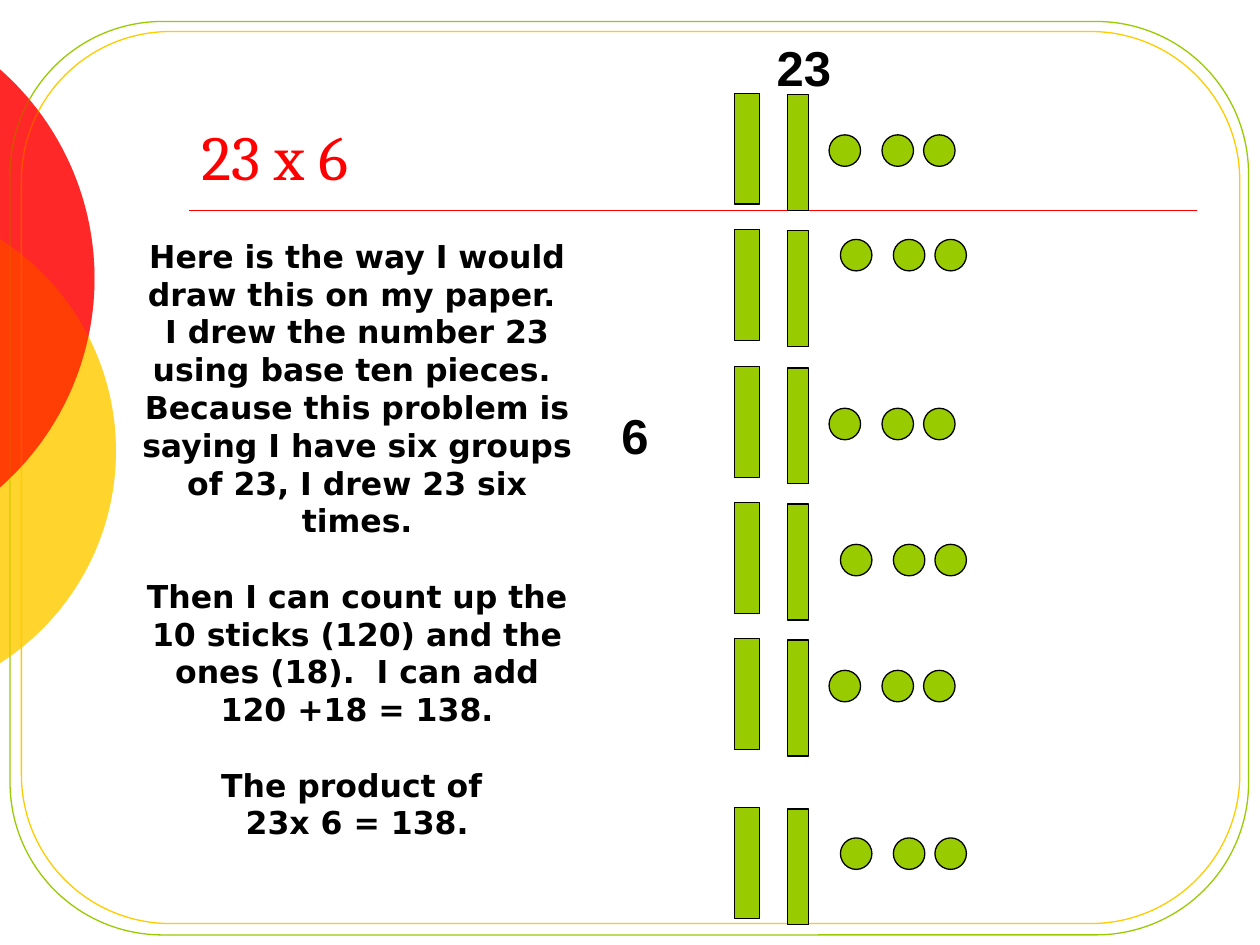
import math

from lxml import etree
from pptx import Presentation
from pptx.dml.color import RGBColor
from pptx.enum import shapes, text
from pptx.oxml import ns
from pptx.util import Inches, Pt

COLORS = {"green": "99CC00", "yellow": "FFCC00", "red": "FF0000", "black": "000000"}


def rgb(name):
    return RGBColor.from_string(COLORS[name])


def style(sp, fill=None, line=None):
    sp.shadow.inherit = False
    if fill:
        sp.fill.solid()
        sp.fill.fore_color.rgb = rgb(fill)
    else:
        sp.fill.background()
    if line:
        sp.line.color.rgb = rgb(line)
        sp.line.width = Pt(0.75)
    else:
        sp.line.fill.background()


def add_shape(s, kind, box, fill=None, line="black"):
    sp = s.shapes.add_shape(kind, *map(Inches, box))
    style(sp, fill, line)
    return sp


def add_text(s, box, paragraphs, size, font, color="black", bold=True,
             align=text.PP_ALIGN.CENTER, anchor=text.MSO_ANCHOR.TOP):
    """Each paragraph is a pair: its wording and the space before it in points."""
    tf = s.shapes.add_textbox(*map(Inches, box)).text_frame
    tf.word_wrap = True
    tf.vertical_anchor = anchor
    for i, (words, gap) in enumerate(paragraphs):
        p = tf.paragraphs[0] if i == 0 else tf.add_paragraph()
        p.alignment = align
        p.space_before = Pt(gap)
        r = p.add_run()
        r.text = words
        r.font.size, r.font.name, r.font.bold = Pt(size), font, bold
        r.font.color.rgb = rgb(color)


def disc_edge(s, left, top, size, color, opacity):
    """The part of a disc that reaches past the left edge of the slide."""
    radius = size / 2
    half = math.acos(-(left + radius) / radius)
    handle = 4 / 3 * math.tan(half / 4) * radius
    dx, dy = radius * math.cos(half), radius * math.sin(half)
    tx, ty = handle * math.sin(half), handle * math.cos(half)
    # Upper arc and lower arc, measured from the centre of the disc
    start = (dx, -dy)
    arcs = [((dx + tx, -dy + ty), (radius, -handle), (radius, 0)),
            ((radius, handle), (dx + tx, dy - ty), (dx, dy))]

    fb = s.shapes.build_freeform(0, 0, scale=1)
    fb.add_line_segments([(Inches(size), 0), (Inches(size), Inches(size))], close=True)
    sp = fb.convert_to_shape(Inches(left), Inches(top))
    style(sp, color)
    clr = sp.fill._xPr.find(".//" + ns.qn("a:srgbClr"))
    etree.SubElement(clr, ns.qn("a:alpha"), val=str(opacity * 1000))

    # Replace the straight outline with curves
    outline = sp._element.spPr.find(".//" + ns.qn("a:path"))
    for step in list(outline):
        outline.remove(step)
    for tag, points in (("a:moveTo", [start]), ("a:cubicBezTo", arcs[0]),
                        ("a:cubicBezTo", arcs[1])):
        step = etree.SubElement(outline, ns.qn(tag))
        for x, y in points:
            etree.SubElement(step, ns.qn("a:pt"), x=str(int(Inches(radius + x))),
                             y=str(int(Inches(radius + y))))
    etree.SubElement(outline, ns.qn("a:close"))


def discs(s):
    disc_edge(s, -3.08, 1.58, 4, "yellow", 58)
    disc_edge(s, -3.67, 0, 4.42, "red", 60)


def background(s):
    discs(s)
    # Double rounded border
    for box, color in (((0.08, 0.17, 9.83, 7.25), "green"),
                       ((0.17, 0.25, 9.67, 7.08), "yellow")):
        sp = add_shape(s, shapes.MSO_SHAPE.ROUNDED_RECTANGLE, box, line=color)
        sp.adjustments[0] = 0.167
    # Rule under the title
    rule = s.shapes.add_connector(shapes.MSO_CONNECTOR.STRAIGHT, Inches(1.5),
                                  Inches(1.67), Inches(9.5), Inches(1.67))
    rule.line.color.rgb = rgb("red")
    rule.line.width = Pt(1)
    etree.SubElement(rule._element.spPr, ns.qn("a:effectLst"))
    # A second layer deepens the colour of the discs
    discs(s)


def base_ten_group(s, left, stick_top, dot_left, dot_top):
    """Two ten sticks and three ones make 23."""
    rect, oval = shapes.MSO_SHAPE.RECTANGLE, shapes.MSO_SHAPE.OVAL
    add_shape(s, rect, (left, stick_top, 0.2, 0.88), "green")
    add_shape(s, rect, (left + 0.42, stick_top + 0.01, 0.17, 0.92), "green")
    for dx in (0, 0.42, 0.75):
        add_shape(s, oval, (dot_left + dx, dot_top, 0.25, 0.25), "green")


def drawing(s, left):
    stick_tops = (0.74, 1.82, 2.91, 3.99, 5.07, 6.41)
    dot_tops = (1.07, 1.9, 3.24, 4.32, 5.32, 6.65)
    for i, (stick_top, dot_top) in enumerate(zip(stick_tops, dot_tops)):
        # Every other row of ones is set slightly to the right
        dot_left = left + (0.84 if i % 2 else 0.75)
        base_ten_group(s, left, stick_top, dot_left, dot_top)
    add_text(s, (left - 2, 3.17, 2.42, 0.57), [("6", 0)], 28, "Arial")
    add_text(s, (left - 0.66, 0.25, 2.42, 0.57), [("23", 0)], 28, "Arial")


def explanation(s, box):
    gap = 21.5  # about one line of body text, in points
    add_text(s, box, [
        ("Here is the way I would draw this on my paper.  I drew the number 23 "
         "using base ten pieces.  Because this problem is saying I have six groups "
         "of 23, I drew 23 six times.", 0),
        ("Then I can count up the 10 sticks (120) and the ones (18).  "
         "I can add 120 +18 = 138.", gap),
        ("The product of ", gap),
        ("23x 6 = 138.", 0),
    ], 18, "DejaVu Sans")


def main():
    prs = Presentation()
    prs.slide_width, prs.slide_height = Inches(10), Inches(7.5)
    s = prs.slides.add_slide(prs.slide_layouts[6])
    background(s)
    add_text(s, (1.5, 0.33, 8, 1.25), [("23 x 6", 0)], 36, "Cambria", "red", False,
             text.PP_ALIGN.LEFT, text.MSO_ANCHOR.BOTTOM)
    drawing(s, 5.83)
    explanation(s, (1, 1.83, 3.67, 4.95))
    prs.save("out.pptx")


if __name__ == "__main__":
    main()
